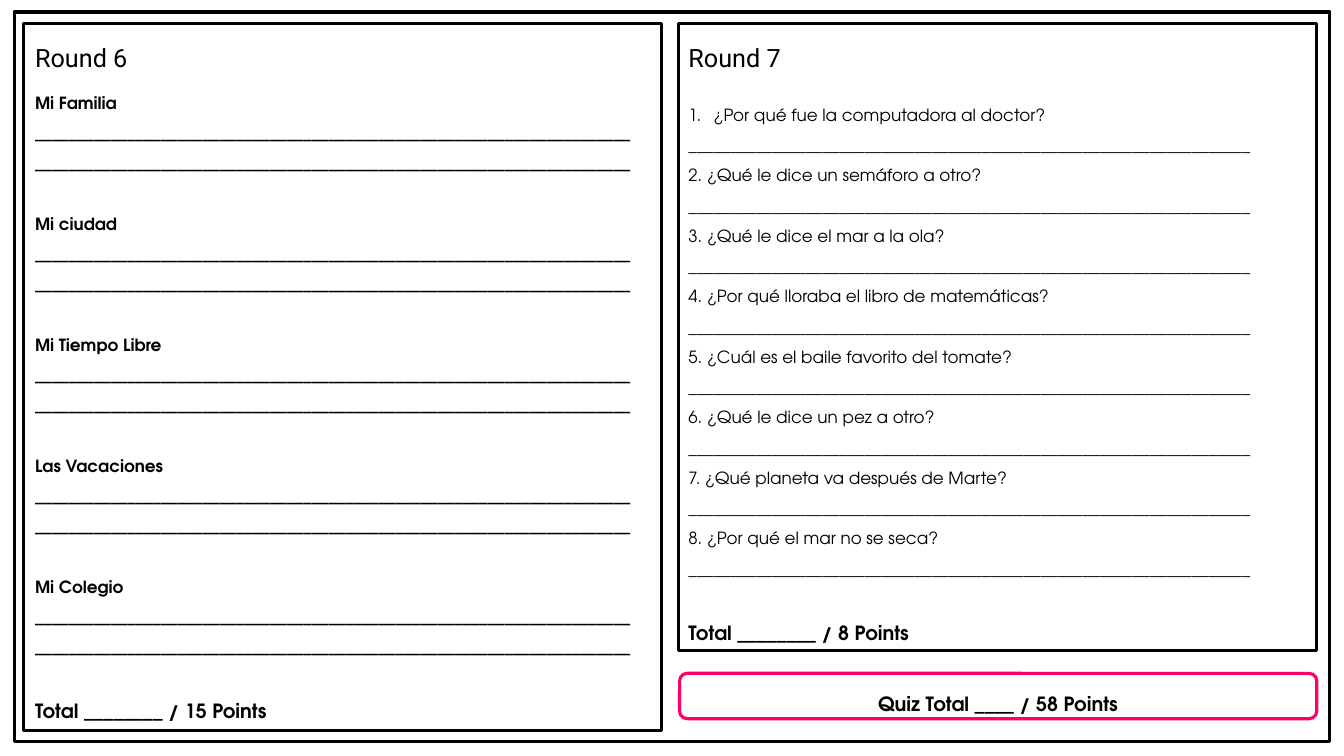
import dataclasses

import pptx
import pptx.dml.color
import pptx.enum.shapes
import pptx.enum.text
import pptx.oxml.ns
import pptx.util
from lxml import etree

Inches = pptx.util.Inches
Pt = pptx.util.Pt
SHAPE = pptx.enum.shapes.MSO_SHAPE
ALIGN = pptx.enum.text.PP_ALIGN


@dataclasses.dataclass(frozen=True)
class Theme:
    """Colours, fonts and type sizes of the quiz sheet."""

    ink: str = "000000"
    accent: str = "FF0066"
    title_font: str = "Roboto"
    body_font: str = "TeX Gyre Adventor"
    title: float = 18
    body: float = 12
    total: float = 14
    border: float = 2.25
    spacing: float = 1.5
    gap: float = 21.6


class QuizSheet:
    """Draws the elements of the quiz on one slide."""

    def __init__(self, slide, theme):
        self.s = slide
        self.theme = theme

    def frame(self, x, y, w, h, color, kind=SHAPE.RECTANGLE):
        """Add an unfilled border and return it."""
        sp = self.s.shapes.add_shape(kind, Inches(x), Inches(y), Inches(w), Inches(h))
        sp.shadow.inherit = False
        sp.fill.background()
        sp.line.color.rgb = pptx.dml.color.RGBColor.from_string(color)
        sp.line.width = Pt(self.theme.border)
        return sp

    def box(self, x, y, w, h):
        """Add a wrapping text box and return its text frame."""
        sp = self.s.shapes.add_textbox(Inches(x), Inches(y), Inches(w), Inches(h))
        tf = sp.text_frame
        tf.word_wrap = True
        tf.auto_size = pptx.enum.text.MSO_AUTO_SIZE.SHAPE_TO_FIT_TEXT
        return tf

    def style(self, p, size, bold=False, font=None, spacing=None, gap=0):
        """Format a paragraph and its runs."""
        p.line_spacing = spacing or self.theme.spacing
        p.space_before = Pt(gap)
        for r in p.runs:
            r.font.name = font or self.theme.body_font
            r.font.size = Pt(size)
            r.font.bold = bold
            r.font.color.rgb = pptx.dml.color.RGBColor.from_string(self.theme.ink)

    def title(self, x, y, text):
        """Add a round heading."""
        tf = self.box(x, y, 2.7, 0.4)
        tf.text = text
        self.style(tf.paragraphs[0], self.theme.title, font=self.theme.title_font, spacing=1.0)

    def answers(self, x, y, w, h, prompts, blanks, total, bold=False, gap=0):
        """Add prompts with answer lines, closed by a total."""
        tf = self.box(x, y, w, h)
        tf.text = "\n".join([line for prompt in prompts for line in (prompt, "_" * blanks)] + [total])
        *lines, last = tf.paragraphs
        for i, p in enumerate(lines):
            self.style(p, self.theme.body, bold, gap=gap if i and i % 2 == 0 else 0)
        self.style(last, self.theme.total, True, gap=self.theme.gap)
        return tf

    def number(self, p, indent):
        """Give a paragraph an automatic number with a hanging indent."""
        pPr = p._p.get_or_add_pPr()
        pPr.set("marL", str(Inches(indent)))
        pPr.set("indent", str(-Inches(indent)))
        bullet = etree.SubElement(pPr, pptx.oxml.ns.qn("a:buAutoNum"))
        bullet.set("type", "arabicPeriod")

    def badge(self, x, y, w, h, text):
        """Add the rounded frame with the quiz total."""
        sp = self.frame(x, y, w, h, self.theme.accent, SHAPE.ROUNDED_RECTANGLE)
        tf = sp.text_frame
        tf.word_wrap = True
        tf.vertical_anchor = pptx.enum.text.MSO_ANCHOR.TOP
        tf.text = text
        p = tf.paragraphs[0]
        p.alignment = ALIGN.CENTER
        self.style(p, self.theme.total, True)


TOPICS = ["Mi Familia", "Mi ciudad", "Mi Tiempo Libre", "Las Vacaciones", "Mi Colegio"]
QUESTIONS = [
    "¿Por qué fue la computadora al doctor?",
    "2. ¿Qué le dice un semáforo a otro?",
    "3. ¿Qué le dice el mar a la ola?",
    "4. ¿Por qué lloraba el libro de matemáticas?",
    "5. ¿Cuál es el baile favorito del tomate?",
    "6. ¿Qué le dice un pez a otro?",
    "7. ¿Qué planeta va después de Marte?",
    "8. ¿Por qué el mar no se seca?",
]


def main():
    """Build the quiz sheet and save it."""
    prs = pptx.Presentation()
    prs.slide_width, prs.slide_height = Inches(13.33), Inches(7.5)
    theme = Theme()
    sheet = QuizSheet(prs.slides.add_slide(prs.slide_layouts[6]), theme)

    for bounds in ((0.14, 0.12, 13.05, 7.24), (0.23, 0.23, 6.33, 7.02), (6.73, 0.23, 6.33, 6.22)):
        sheet.frame(*bounds, theme.ink)

    sheet.title(0.25, 0.37, "Round 6")
    sheet.answers(0.25, 0.77, 6.17, 6.47, TOPICS, 142, "Total ________ / 15 Points", True, theme.gap)

    sheet.title(6.73, 0.37, "Round 7")
    tf = sheet.answers(6.73, 0.89, 6.17, 5.56, QUESTIONS, 67, "Total ________ / 8 Points")
    sheet.number(tf.paragraphs[0], 0.25)

    sheet.badge(6.74, 6.68, 6.32, 0.45, "Quiz Total ____ / 58 Points")
    prs.save("out.pptx")


if __name__ == "__main__":
    main()
